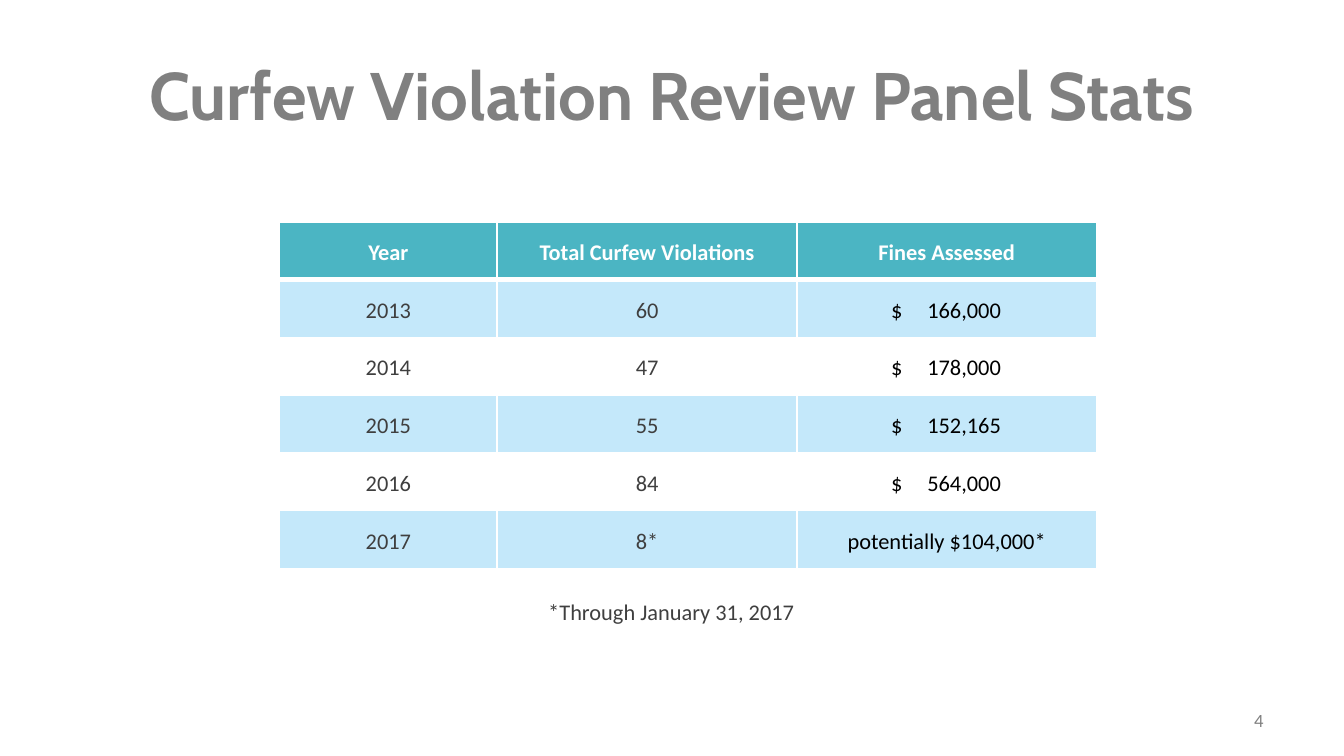
import pptx
import pptx.util
import pptx.dml.color
import pptx.enum.text
import pptx.oxml
import pptx.oxml.ns

Inches = pptx.util.Inches
Pt = pptx.util.Pt
RGBColor = pptx.dml.color.RGBColor
Align = pptx.enum.text.PP_ALIGN
Anchor = pptx.enum.text.MSO_ANCHOR

GRAY = RGBColor(0x80, 0x80, 0x80)
DARK = RGBColor(0x3F, 0x3F, 0x3F)
BLACK = RGBColor(0, 0, 0)
WHITE = RGBColor(255, 255, 255)
TEAL = RGBColor(0x4B, 0xB5, 0xC3)
SKY = RGBColor(0xC4, 0xE8, 0xFA)

HEAD = ("Year", "Total Curfew Violations", "Fines Assessed")
STATS = (
    ("2013", "60", "$\t166,000"),
    ("2014", "47", "$\t178,000"),
    ("2015", "55", "$\t152,165"),
    ("2016", "84", "$\t564,000"),
    ("2017", "8*", "potentially $104,000*"),
)


class Deck:
    def __init__(self, wide):
        """Start a deck with one blank 16:9 slide."""
        self.show = pptx.Presentation()
        self.show.slide_width = Inches(wide)
        self.show.slide_height = Inches(wide * 9 / 16)
        self.slide = self.show.slides.add_slide(self.show.slide_layouts[6])
        self.body = "Calibri"

    def style(self, par, size, color, bold=False, align=Align.CENTER, font=None):
        par.alignment = align
        for run in par.runs:
            run.font.name = font or self.body
            run.font.size = Pt(size)
            run.font.bold = bold
            run.font.color.rgb = color

    def text(self, words, box, size, color, anchor=Anchor.MIDDLE, gap=0, **look):
        frame = self.slide.shapes.add_textbox(*map(Inches, box)).text_frame
        frame.word_wrap = True
        frame.vertical_anchor = anchor
        frame.text = words
        par = frame.paragraphs[0]
        par.space_before = par.space_after = Pt(gap)
        self.style(par, size, color, **look)

    def edge(self, cell, side, width):
        """Draw one white border; side is L, R, T or B."""
        cell._tc.get_or_add_tcPr().append(pptx.oxml.parse_xml(
            f'<a:ln{side} {pptx.oxml.ns.nsdecls("a")} w="{Pt(width)}"><a:solidFill>'
            f'<a:srgbClr val="{WHITE}"/></a:solidFill></a:ln{side}>'))

    def money(self, cell, par):
        """Line up the dollar sign and the sum at a tab stop."""
        cell.margin_left = Inches(0.7)
        par.alignment = Align.LEFT
        props = par._p.get_or_add_pPr()
        props.append(pptx.oxml.parse_xml(
            f'<a:tabLst {pptx.oxml.ns.nsdecls("a")}>'
            f'<a:tab pos="{Inches(0.27)}" algn="l"/></a:tabLst>'))

    def cell(self, cell, words, row, col):
        head = row == 0
        for side in "LRTB":
            thick = (head and side == "B") or (row == 1 and side == "T")
            self.edge(cell, side, 3 if thick else 1)
        if head or row % 2:
            cell.fill.solid()
            cell.fill.fore_color.rgb = TEAL if head else SKY
        else:
            cell.fill.background()
        cell.vertical_anchor = Anchor.MIDDLE
        cell.margin_top = cell.margin_bottom = 0
        cell.margin_left = cell.margin_right = Inches(0.07 if col == 2 else 0)
        cell.text_frame.text = words
        par = cell.text_frame.paragraphs[0]
        par.line_spacing = 1.15
        par.space_before = par.space_after = Pt(0 if col == 2 else 5)
        color = WHITE if head else BLACK if col == 2 else DARK
        self.style(par, 12, color, bold=head)
        if "\t" in words:
            self.money(cell, par)

    def table(self, rows, left, top, cols, high):
        grid = self.slide.shapes.add_table(
            len(rows), len(cols), Inches(left), Inches(top),
            Inches(sum(cols)), Inches(high * len(rows))).table
        for col, wide in enumerate(cols):
            grid.columns[col].width = Inches(wide)
        for row, line in enumerate(rows):
            for col, words in enumerate(line):
                self.cell(grid.cell(row, col), words, row, col)


def main():
    deck = Deck(10)
    deck.text("Curfew Violation Review Panel Stats", (0, 0.23, 10, 0.94),
              36, GRAY, bold=True, font="Cabin")
    deck.text("4", (7.17, 5.21, 2.33, 0.3), 10, GRAY, align=Align.RIGHT)
    deck.table((HEAD,) + STATS, 2.08, 1.65, (1.62, 2.23, 2.23), 0.43)
    deck.text("*Through January 31, 2017", (3.45, 4.4, 3.09, 0.43),
              12, DARK, anchor=Anchor.TOP, gap=5)
    deck.show.save("out.pptx")


if __name__ == "__main__":
    main()
